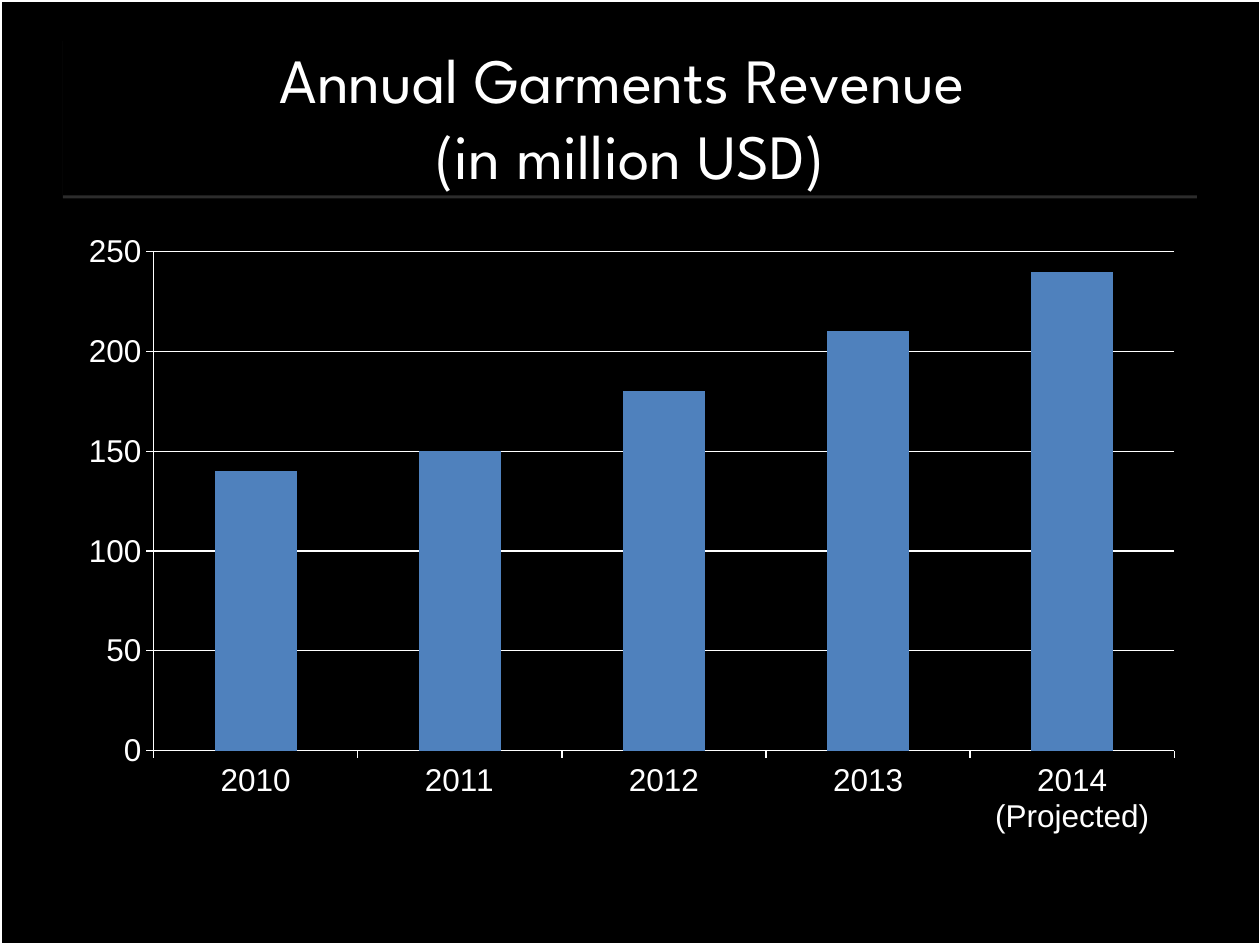
from lxml.etree import SubElement
from pptx import Presentation
from pptx.chart.data import CategoryChartData
from pptx.dml.color import RGBColor
from pptx.enum.chart import XL_CHART_TYPE, XL_TICK_MARK
from pptx.enum.shapes import MSO_SHAPE
from pptx.enum.text import MSO_ANCHOR, PP_ALIGN
from pptx.oxml import parse_xml
from pptx.oxml.ns import nsdecls, qn
from pptx.util import Inches, Pt

COLORS = {"background": "000000", "text": "FFFFFF", "bar": "4F81BD", "shadow": "808080"}
REVENUE = {"2010": 140, "2011": 150, "2012": 180, "2013": 210, "2014 (Projected)": 240}


def color(name):
    return RGBColor.from_string(COLORS[name])


def add_frame(slide, left, top, width, height):
    frame = slide.shapes.add_shape(MSO_SHAPE.RECTANGLE, left, top, width, height)
    frame.shadow.inherit = False
    frame.fill.background()
    frame.line.color.rgb = color("text")
    frame.line.width = Pt(2.25)


def add_title(slide, left, top, width, height):
    title = slide.shapes.add_shape(MSO_SHAPE.RECTANGLE, left, top, width, height)
    title.fill.solid()
    title.fill.fore_color.rgb = color("background")
    title.line.fill.background()

    # The shadow shows as a grey rule below the title
    title.shadow.inherit = False
    effects = title._element.spPr.find(qn("a:effectLst"))
    effects.append(parse_xml(
        f'<a:outerShdw {nsdecls("a")} dist="{Pt(1.8)}" dir="5400000" rotWithShape="0">'
        f'<a:srgbClr val="{COLORS["shadow"]}"><a:alpha val="35000"/></a:srgbClr>'
        "</a:outerShdw>"))

    frame = title.text_frame
    frame.word_wrap = True
    frame.vertical_anchor = MSO_ANCHOR.MIDDLE
    frame.margin_left = frame.margin_right = Inches(0.04)
    frame.margin_top = frame.margin_bottom = Inches(0.04)
    paragraph = frame.paragraphs[0]
    paragraph.text = "Annual Garments Revenue \v(in million USD)"
    paragraph.alignment = PP_ALIGN.CENTER
    paragraph.font.name = "League Spartan"
    paragraph.font.size = Pt(36)
    paragraph.font.color.rgb = color("text")


def set_plot_layout(chart, **fractions):
    """Place the inner plot area by fractions of the chart box."""
    plot_area = chart._chartSpace.chart.plotArea
    layout = plot_area.find(qn("c:layout"))
    if layout is None:
        layout = plot_area.makeelement(qn("c:layout"))
        plot_area.insert(0, layout)
    manual = SubElement(layout, qn("c:manualLayout"))
    settings = {"layoutTarget": "inner", "xMode": "edge", "yMode": "edge", **fractions}
    for name, value in settings.items():
        SubElement(manual, qn(f"c:{name}")).set("val", str(value))


def add_revenue_chart(slide, left, top, width, height):
    data = CategoryChartData(number_format="General")
    data.categories = list(REVENUE)
    data.add_series("Series 1", list(REVENUE.values()))
    chart = slide.shapes.add_chart(
        XL_CHART_TYPE.COLUMN_STACKED, left, top, width, height, data).chart
    chart.has_legend = False
    chart.has_title = False
    chart.font.name = "Arial"
    chart.font.size = Pt(18)
    chart.font.color.rgb = color("text")
    set_plot_layout(chart, x=0.08, y=0.05, w=0.9, h=0.8)

    # Bars
    plot = chart.plots[0]
    plot.vary_by_categories = False
    plot.gap_width = 150
    plot.overlap = 100
    bars = plot.series[0].format.fill
    bars.solid()
    bars.fore_color.rgb = color("bar")

    # Axes and gridlines
    value_axis = chart.value_axis
    value_axis.minimum_scale = 0
    value_axis.maximum_scale = 250
    value_axis.major_unit = 50
    value_axis.has_major_gridlines = True
    for axis in (chart.category_axis, value_axis):
        axis.major_tick_mark = XL_TICK_MARK.OUTSIDE
    for part in (chart.category_axis, value_axis, value_axis.major_gridlines):
        part.format.line.color.rgb = color("text")
        part.format.line.width = Pt(0.75)


def main():
    presentation = Presentation()
    presentation.slide_width = Inches(10)
    presentation.slide_height = Inches(7.5)
    slide = presentation.slides.add_slide(presentation.slide_layouts[6])
    slide.background.fill.solid()
    slide.background.fill.fore_color.rgb = color("background")

    add_frame(slide, 0, 0, Inches(10.01), Inches(7.5))
    add_title(slide, Inches(0.5), Inches(0.3), Inches(9), Inches(1.25))
    add_revenue_chart(slide, Inches(0.5), Inches(1.75), Inches(9), Inches(4.95))
    presentation.save("out.pptx")


if __name__ == "__main__":
    main()
